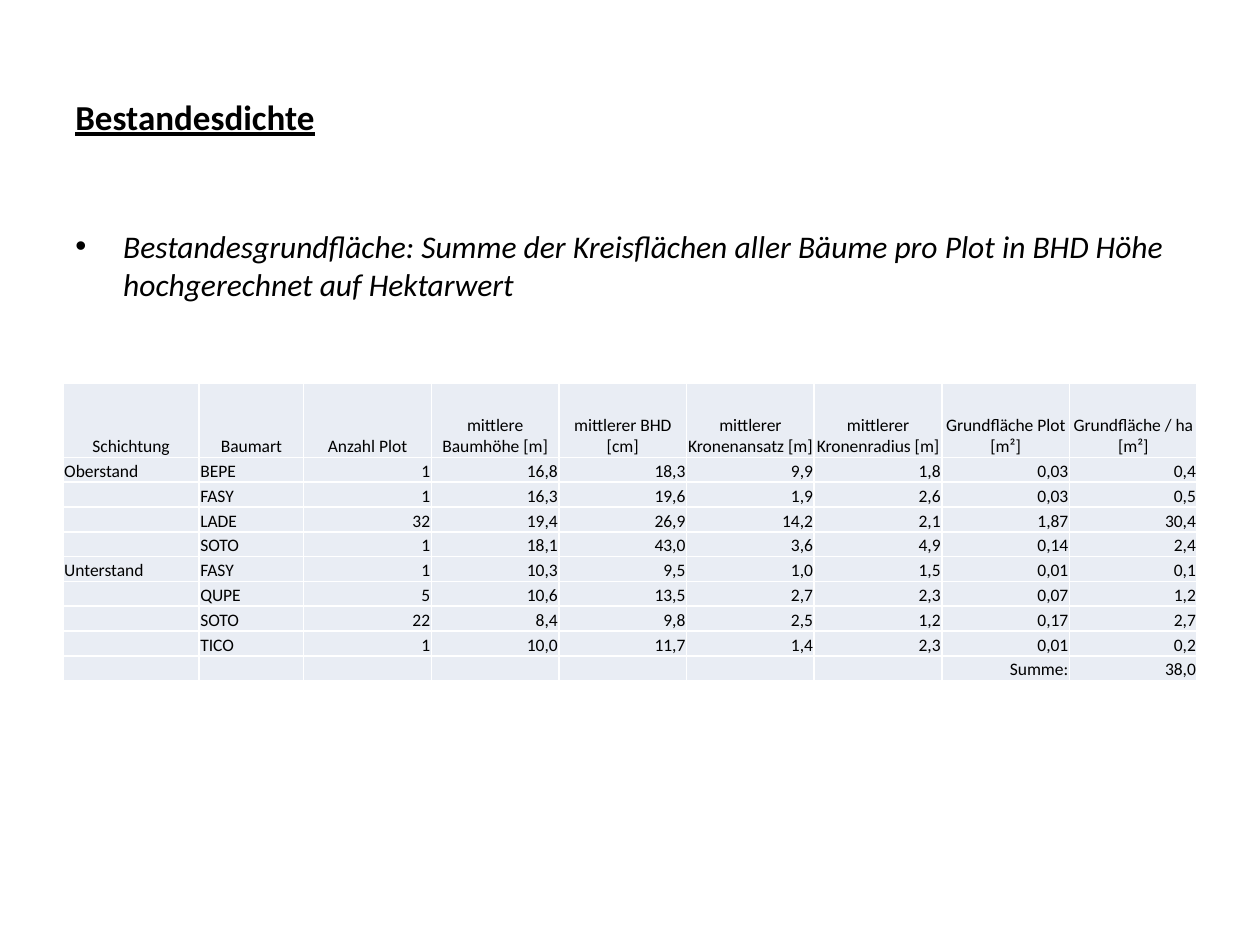
from lxml.etree import SubElement
from pptx import Presentation
from pptx.dml.color import RGBColor
from pptx.enum.text import MSO_ANCHOR as Anchor, PP_ALIGN as Align
from pptx.oxml.ns import qn
from pptx.util import Inches, Pt

BLACK = RGBColor(0x00, 0x00, 0x00)
PALE_BLUE = RGBColor(0xE9, 0xED, 0xF4)
WHITE = RGBColor(0xFF, 0xFF, 0xFF)
FONT = "Calibri"

TITLE = "Bestandesdichte"
DEFINITION = ("Bestandesgrundfläche: Summe der Kreisflächen aller Bäume pro Plot "
              "in BHD Höhe hochgerechnet auf Hektarwert")
ROWS = [
    ("Schichtung", "Baumart", "Anzahl Plot", "mittlere Baumhöhe [m]",
     "mittlerer BHD [cm]", "mittlerer Kronenansatz [m]",
     "mittlerer Kronenradius [m]", "Grundfläche Plot [m²]",
     "Grundfläche / ha [m²]"),
    ("Oberstand", "BEPE", "1", "16,8", "18,3", "9,9", "1,8", "0,03", "0,4"),
    ("", "FASY", "1", "16,3", "19,6", "1,9", "2,6", "0,03", "0,5"),
    ("", "LADE", "32", "19,4", "26,9", "14,2", "2,1", "1,87", "30,4"),
    ("", "SOTO", "1", "18,1", "43,0", "3,6", "4,9", "0,14", "2,4"),
    ("Unterstand", "FASY", "1", "10,3", "9,5", "1,0", "1,5", "0,01", "0,1"),
    ("", "QUPE", "5", "10,6", "13,5", "2,7", "2,3", "0,07", "1,2"),
    ("", "SOTO", "22", "8,4", "9,8", "2,5", "1,2", "0,17", "2,7"),
    ("", "TICO", "1", "10,0", "11,7", "1,4", "2,3", "0,01", "0,2"),
    ("", "", "", "", "", "", "", "Summe:", "38,0"),
]
TEXT_COLUMNS = 2
COLUMN_WIDTHS = [1.08, 0.83] + [1.013] * 7
ROW_HEIGHTS = [0.59] + [0.197] * 9
LEFT, WIDTH = Inches(0.5), Inches(9)


def set_font(paragraph, size):
    font = paragraph.font
    font.name, font.size, font.color.rgb = FONT, Pt(size), BLACK
    return font


def add_text(slide, text, top, height, size, anchor):
    frame = slide.shapes.add_textbox(LEFT, Inches(top), WIDTH, Inches(height)).text_frame
    frame.word_wrap = True
    frame.vertical_anchor = anchor
    paragraph = frame.paragraphs[0]
    paragraph.text = text
    set_font(paragraph, size)
    return paragraph


def add_bullet(paragraph, indent):
    properties = paragraph._p.get_or_add_pPr()
    properties.set("marL", str(Inches(indent)))
    properties.set("indent", str(-Inches(indent)))
    bullet_font = SubElement(properties, qn("a:buFont"), typeface="Arial")
    bullet = SubElement(properties, qn("a:buChar"), char="•")
    # Bullet elements come before the default run properties
    defaults = properties.find(qn("a:defRPr"))
    defaults.addprevious(bullet_font)
    defaults.addprevious(bullet)


def add_borders(cell):
    properties = cell._tc.get_or_add_tcPr()
    for side in ("a:lnL", "a:lnR", "a:lnT", "a:lnB"):
        line = SubElement(properties, qn(side), w=str(Pt(1)))
        SubElement(SubElement(line, qn("a:solidFill")), qn("a:srgbClr"), val=str(WHITE))


def fill_cell(cell, text, align):
    add_borders(cell)
    cell.fill.solid()
    cell.fill.fore_color.rgb = PALE_BLUE
    cell.vertical_anchor = Anchor.BOTTOM
    cell.margin_left = cell.margin_right = cell.margin_top = Inches(0.01)
    cell.margin_bottom = 0
    paragraph = cell.text_frame.paragraphs[0]
    paragraph.alignment = align
    set_font(paragraph, 10)
    if text:
        paragraph.text = text
    else:  # keeps the empty row as low as the others
        SubElement(paragraph._p, qn("a:endParaRPr"), sz="1000")


prs = Presentation()
prs.slide_width, prs.slide_height = Inches(10), Inches(7.5)
slide = prs.slides.add_slide(prs.slide_layouts[6])

# Definition and title
definition = add_text(slide, DEFINITION, 1.75, 4.95, 18, Anchor.TOP)
definition.font.italic = True
definition.space_before = Pt(3.6)
add_bullet(definition, 0.38)

title = add_text(slide, TITLE, 0.3, 1.25, 20, Anchor.MIDDLE)
title.font.bold = title.font.underline = True

# Stand table
stands = slide.shapes.add_table(len(ROWS), len(COLUMN_WIDTHS), LEFT, Inches(3.04),
                                WIDTH, Inches(sum(ROW_HEIGHTS))).table
stands.first_row = stands.horz_banding = False
for column, width in zip(stands.columns, COLUMN_WIDTHS):
    column.width = Inches(width)
for row, height in zip(stands.rows, ROW_HEIGHTS):
    row.height = Inches(height)
for r, values in enumerate(ROWS):
    for c, value in enumerate(values):
        body_align = Align.LEFT if c < TEXT_COLUMNS else Align.RIGHT
        fill_cell(stands.cell(r, c), value, Align.CENTER if r == 0 else body_align)

prs.save("out.pptx")
